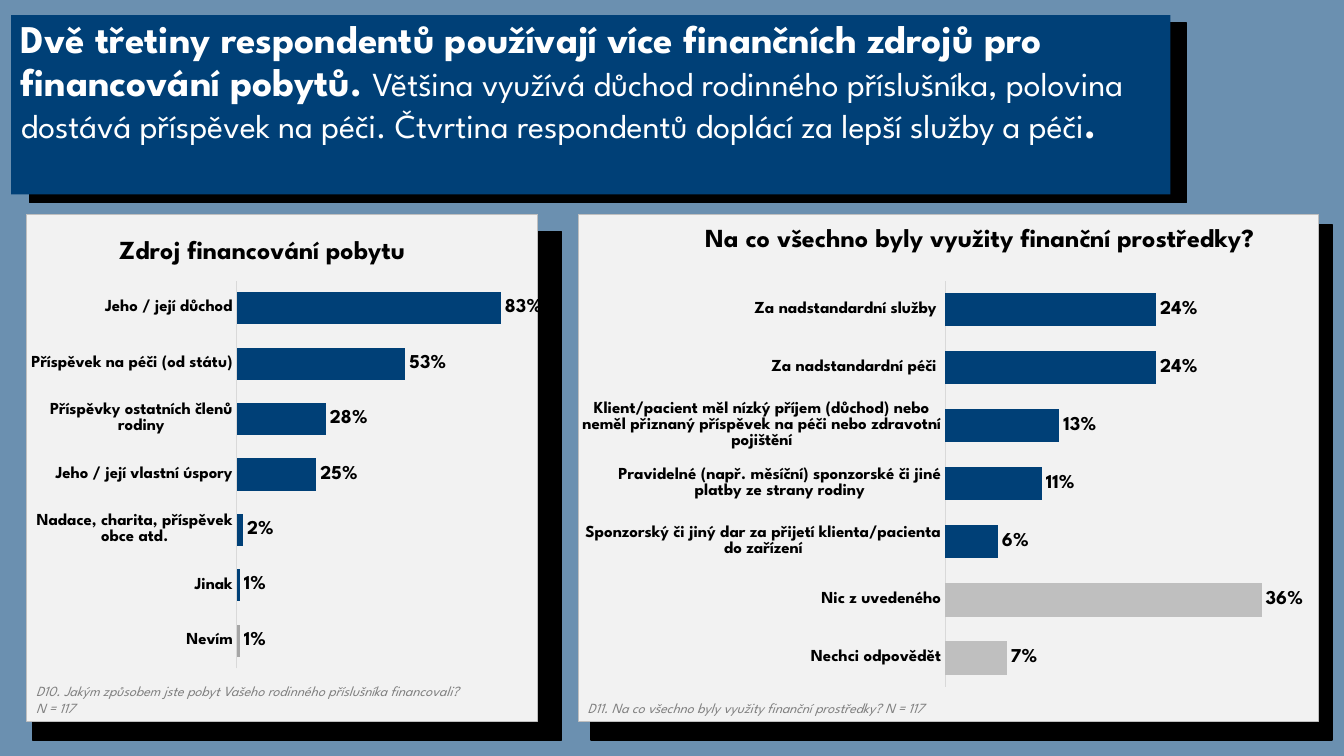
import pptx
import pptx.chart.data
import pptx.dml.color
import pptx.enum.chart
import pptx.enum.shapes
import pptx.enum.text
import pptx.oxml
import pptx.oxml.ns
import pptx.util
from pptx.util import Inches

NAVY = "004077"
BLACK = "000000"
BRAND_FONT = "League Spartan"
CHART_NS = pptx.oxml.ns.nsdecls("c", "a")


def color(value):
    return pptx.dml.color.RGBColor.from_string(value)


def set_font(font, size, value, name=BRAND_FONT, bold=False, italic=False):
    font.size = pptx.util.Pt(size)
    font.name = name
    font.bold = bold
    font.italic = italic
    font.color.rgb = color(value)


def layout(x, y, w=None, h=None):
    """Manual chart layout in fractions; a size makes it an inner plot area."""
    parts = [("xMode", "edge"), ("yMode", "edge"), ("x", x), ("y", y)]
    if w is not None:
        parts = [("layoutTarget", "inner")] + parts + [("w", w), ("h", h)]
    inside = "".join(f'<c:{tag} val="{value}"/>' for tag, value in parts)
    return pptx.oxml.parse_xml(
        f"<c:layout {CHART_NS}><c:manualLayout>{inside}</c:manualLayout></c:layout>")


def place(element, position, new_layout):
    for old in element.findall(pptx.oxml.ns.qn("c:layout")):
        element.remove(old)
    element.insert(position, new_layout)


class SurveySlide:
    """Holds the slide and its house style."""

    def __init__(self, deck):
        self.page = deck.slides.add_slide(deck.slide_layouts[6])
        self.page.background.fill.solid()
        self.page.background.fill.fore_color.rgb = color("6B90B0")

    def block(self, left, top, width, height, fill, outline=None):
        shape = self.page.shapes.add_shape(
            pptx.enum.shapes.MSO_SHAPE.RECTANGLE,
            Inches(left), Inches(top), Inches(width), Inches(height))
        shape.shadow.inherit = False
        shape.fill.solid()
        shape.fill.fore_color.rgb = color(fill)
        if outline:
            shape.line.color.rgb = color(outline)
            shape.line.width = pptx.util.Pt(1)
        else:
            shape.line.fill.background()
        return shape

    def headline(self, left, top, width, height, spans):
        frame = self.block(left, top, width, height, NAVY).text_frame
        frame.word_wrap = True
        frame.vertical_anchor = pptx.enum.text.MSO_ANCHOR.TOP
        para = frame.paragraphs[0]
        para.alignment = pptx.enum.text.PP_ALIGN.LEFT
        para.line_spacing = 0.9
        for text, size, bold in spans:
            span = para.add_run()
            span.text = text
            set_font(span.font, size, "FFFFFF", bold=bold)

    def note(self, left, top, width, height, text):
        box = self.page.shapes.add_textbox(
            Inches(left), Inches(top), Inches(width), Inches(height))
        box.text_frame.word_wrap = True
        span = box.text_frame.paragraphs[0].add_run()
        span.text = text
        set_font(span.font, 10, "808080", italic=True)

    def bar_chart(self, left, top, width, height, title, title_at, plot_at,
                  values, maximum, muted):
        """Values run from bottom to top; muted maps a bar index to its colour."""
        data = pptx.chart.data.CategoryChartData(number_format="0%")
        data.categories = list(values)
        data.add_series("Series 1", list(values.values()))
        chart = self.page.shapes.add_chart(
            pptx.enum.chart.XL_CHART_TYPE.BAR_CLUSTERED,
            Inches(left), Inches(top), Inches(width), Inches(height), data).chart
        set_font(chart.font, 10, BLACK, name="Calibri")
        chart.has_legend = False

        chart.has_title = True
        span = chart.chart_title.text_frame.paragraphs[0].add_run()
        span.text = title
        set_font(span.font, 18.6, BLACK, bold=True)
        place(chart.chart_title._element, 1, layout(*title_at))

        space = chart._chartSpace
        place(space.find(".//" + pptx.oxml.ns.qn("c:plotArea")), 0, layout(*plot_at))
        space.find(pptx.oxml.ns.qn("c:chart")).addnext(pptx.oxml.parse_xml(
            f'<c:spPr {CHART_NS}><a:solidFill><a:srgbClr val="F2F2F2"/></a:solidFill>'
            '<a:ln w="9525"><a:solidFill><a:srgbClr val="BFBFBF"/></a:solidFill></a:ln>'
            "</c:spPr>"))

        axis = chart.category_axis
        axis.major_tick_mark = pptx.enum.chart.XL_TICK_MARK.NONE
        axis.format.line.color.rgb = color("D9D9D9")
        axis.format.line.width = pptx.util.Pt(0.75)
        set_font(axis.tick_labels.font, 12, BLACK, bold=True)
        scale = chart.value_axis
        scale.minimum_scale = 0
        scale.maximum_scale = maximum
        scale.has_major_gridlines = False
        scale.visible = False

        plot = chart.plots[0]
        plot.gap_width = 72
        plot.vary_by_categories = False
        plot.has_data_labels = True
        labels = plot.data_labels
        labels.show_value = True
        labels.number_format = "0%"
        labels.number_format_is_linked = False
        labels.position = pptx.enum.chart.XL_LABEL_POSITION.OUTSIDE_END
        set_font(labels.font, 14, BLACK, bold=True)
        series = plot.series[0]
        series.invert_if_negative = False
        series.format.fill.solid()
        series.format.fill.fore_color.rgb = color(NAVY)
        for index, shade in muted.items():
            fill = series.points[index].format.fill
            fill.solid()
            fill.fore_color.rgb = color(shade)


def main():
    deck = pptx.Presentation()
    deck.slide_width = Inches(13.33)
    deck.slide_height = Inches(7.5)
    slide = SurveySlide(deck)

    for backing in [(5.86, 2.23, 7.35, 5.11), (0.32, 2.3, 5.25, 5.04),
                    (0.29, 0.23, 11.48, 1.78)]:
        slide.block(*backing, BLACK, BLACK)

    slide.bar_chart(
        5.73, 2.12, 7.35, 5.04,
        "Na co všechno byly využity finanční prostředky?",
        (0.165, 0.012), (0.496, 0.131, 0.475, 0.801),
        {
            "Nechci odpovědět": 0.07,
            "Nic z uvedeného": 0.36,
            "Sponzorský či jiný dar za přijetí klienta/pacienta do zařízení": 0.06,
            "Pravidelné (např. měsíční) sponzorské či jiné platby ze strany rodiny": 0.11,
            "Klient/pacient měl nízký příjem (důchod) nebo neměl přiznaný "
            "příspěvek na péči nebo zdravotní pojištění": 0.13,
            "Za nadstandardní péči ": 0.24,
            "Za nadstandardní služby ": 0.24,
        },
        0.4, {0: "BFBFBF", 1: "BFBFBF"})
    slide.headline(0.11, 0.15, 11.5, 1.78, [
        ("Dvě třetiny respondentů používají více finančních zdrojů pro "
         "financování pobytů. ", 28, True),
        ("Většina využívá důchod rodinného příslušníka, polovina dostává příspěvek "
         "na péči. Čtvrtina respondentů doplácí za lepší služby a péči", 24, False),
        (".", 28, True),
    ])
    slide.note(5.73, 6.89, 4.52, 0.27,
               "D11. Na co všechno byly využity finanční prostředky? N = 117")
    slide.bar_chart(
        0.26, 2.12, 5.12, 5.04,
        "Zdroj financování pobytu",
        (0.172, 0.037), (0.411, 0.131, 0.561, 0.765),
        {
            "Nevím": 0.01,
            "Jinak": 0.01,
            "Nadace, charita, příspěvek obce atd.": 0.02,
            "Jeho / její vlastní úspory": 0.25,
            "Příspěvky ostatních členů rodiny": 0.28,
            "Příspěvek na péči (od státu)": 0.53,
            "Jeho / její důchod": 0.83,
        },
        0.9, {0: "A6A6A6"})
    slide.note(0.26, 6.72, 4.4, 0.44,
               "D10. Jakým způsobem jste pobyt Vašeho rodinného příslušníka "
               "financovali? N = 117")
    deck.save("out.pptx")


if __name__ == "__main__":
    main()
